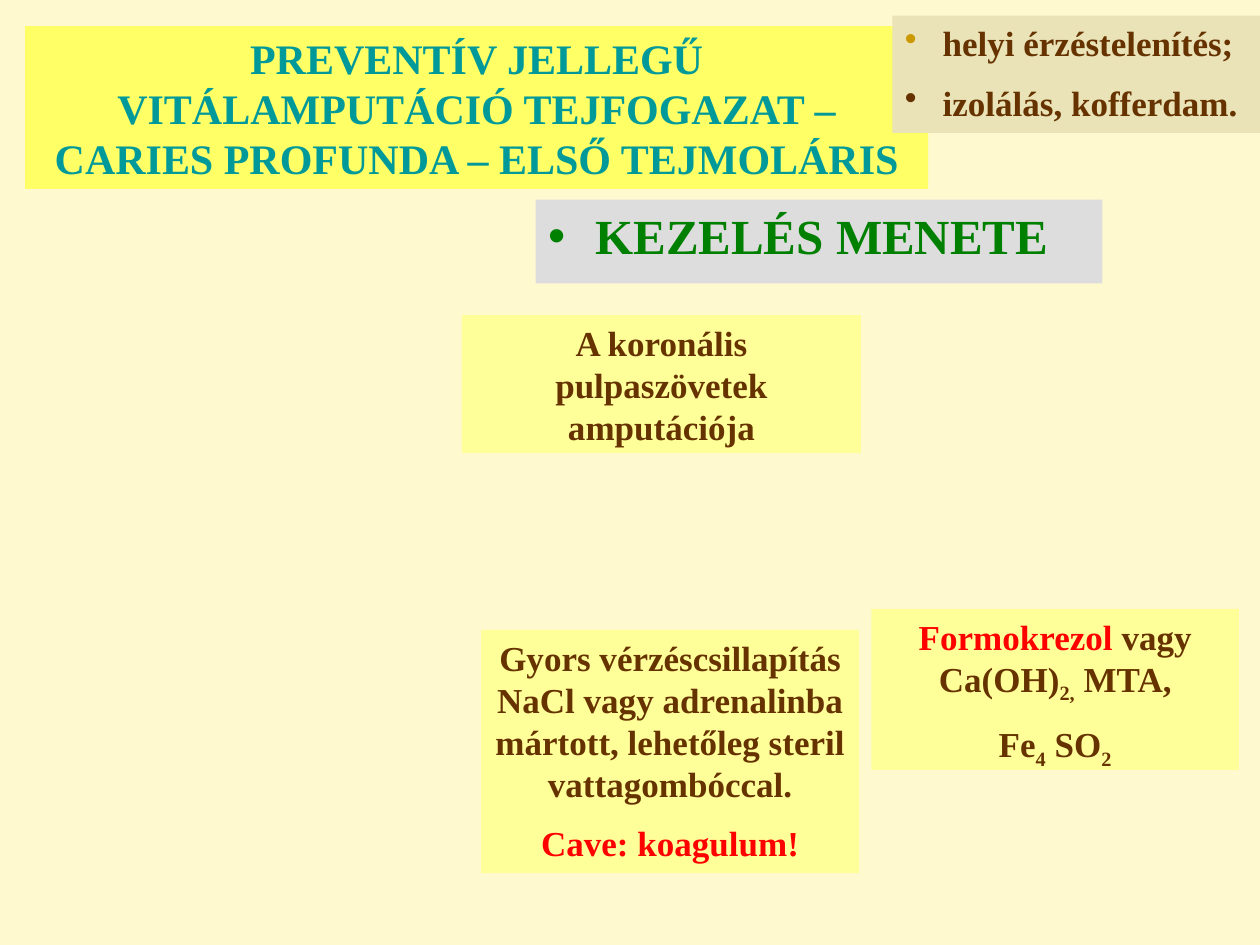
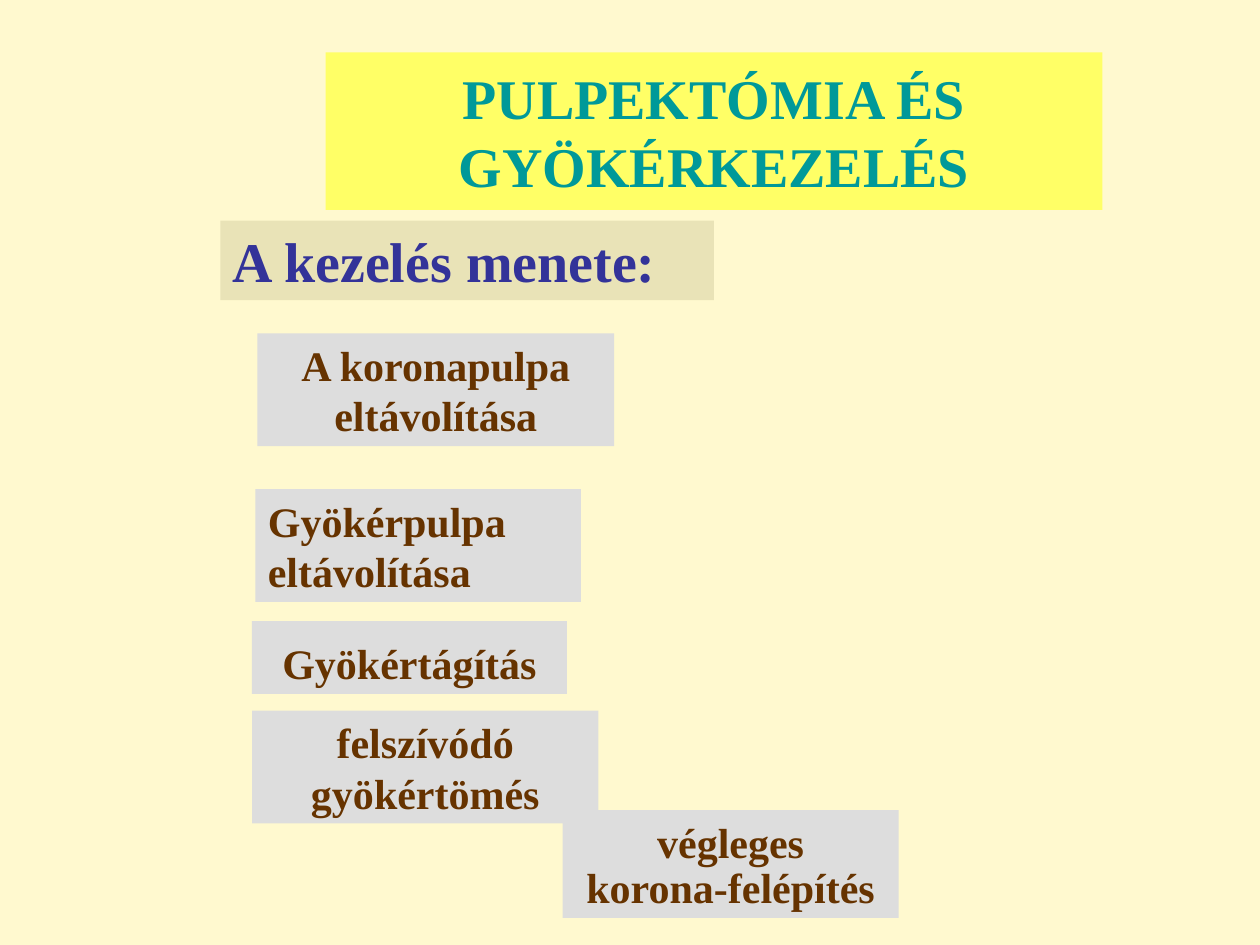
from lxml import etree
from pptx import Presentation
from pptx.dml.color import RGBColor
from pptx.enum.text import MSO_ANCHOR, MSO_AUTO_SIZE, PP_ALIGN
from pptx.oxml.ns import qn
from pptx.util import Pt

LEFT, CENTER = PP_ALIGN.LEFT, PP_ALIGN.CENTER
TOP, MIDDLE = MSO_ANCHOR.TOP, MSO_ANCHOR.MIDDLE
FIXED, GROW = MSO_AUTO_SIZE.NONE, MSO_AUTO_SIZE.SHAPE_TO_FIT_TEXT

FONT = "Times New Roman"
CREAM = RGBColor(0xFF, 0xF9, 0xCF)
YELLOW = RGBColor(0xFF, 0xFF, 0x66)
PALE_YELLOW = RGBColor(0xFF, 0xFF, 0x99)
GREY = RGBColor(0xDD, 0xDD, 0xDD)
SAND = RGBColor(0xE9, 0xE3, 0xB7)
TEAL = RGBColor(0x00, 0x99, 0x99)
GREEN = RGBColor(0x00, 0x80, 0x00)
BROWN = RGBColor(0x66, 0x33, 0x00)
RED = RGBColor(0xFF, 0x00, 0x00)
GOLD = RGBColor(0xCC, 0x99, 0x00)
INDIGO = RGBColor(0x33, 0x33, 0x99)

TITLE_AND_CONTENT, TITLE_ONLY = 1, 5
BULLET_INDENT = Pt(21.6)


class Deck:
    """Holds the shared style and the current slide."""

    def __init__(self):
        self.presentation = Presentation()
        self.presentation.slide_width = Pt(720)
        self.presentation.slide_height = Pt(540)
        background = self.presentation.slide_master.background.fill
        background.solid()
        background.fore_color.rgb = CREAM
        self.slide = None

    def new_slide(self, layout):
        layouts = self.presentation.slide_layouts
        self.slide = self.presentation.slides.add_slide(layouts[layout])

    def dress(self, shape, box, fill, anchor, auto_size):
        shape.left, shape.top, shape.width, shape.height = map(Pt, box)
        shape.fill.solid()
        shape.fill.fore_color.rgb = fill
        frame = shape.text_frame
        frame.word_wrap = True
        frame.vertical_anchor = anchor
        frame.auto_size = auto_size
        return frame

    def format_runs(self, paragraph, size, color):
        for line_break in paragraph._p.findall(qn("a:br")):
            etree.SubElement(line_break, qn("a:rPr"), sz=str(size * 100), b="1")
        for run in paragraph.runs:
            run.font.name = FONT
            run.font.size = Pt(size)
            run.font.bold = True
            run.font.color.rgb = color

    def placeholder(self, shape, text, box, size, color, fill, align, anchor):
        frame = self.dress(shape, box, fill, anchor, FIXED)
        frame.text = text
        paragraph = frame.paragraphs[0]
        paragraph.alignment = align
        paragraph.space_before = Pt(0)
        self.format_runs(paragraph, size, color)

    def title(self, text, box, size):
        self.placeholder(self.slide.shapes.title, text, box, size,
                         TEAL, YELLOW, CENTER, MIDDLE)

    def body(self, text, box, size, color):
        self.placeholder(self.slide.placeholders[1], text, box, size,
                         color, GREY, LEFT, TOP)

    def note(self, lines, box, size, fill, color=BROWN, align=CENTER, anchor=TOP):
        shape = self.slide.shapes.add_textbox(*map(Pt, box))
        frame = self.dress(shape, box, fill, anchor, GROW)
        frame.text = "\n".join(lines)
        for index, paragraph in enumerate(frame.paragraphs):
            paragraph.alignment = align
            paragraph.space_before = Pt(size / 2 if index else 0)
            self.format_runs(paragraph, size, color)
        return frame.paragraphs

    def bullet(self, paragraph, color):
        properties = paragraph._p.get_or_add_pPr()
        properties.set("marL", str(BULLET_INDENT))
        properties.set("indent", str(-BULLET_INDENT))
        bullet_color = etree.SubElement(properties, qn("a:buClr"))
        etree.SubElement(bullet_color, qn("a:srgbClr"), val=str(color))
        etree.SubElement(properties, qn("a:buChar"), char="•")

    def formula(self, paragraph, parts, size):
        paragraph.text = ""
        for text, color, is_subscript in parts:
            run = paragraph.add_run()
            run.text = text
            if is_subscript:
                run.font._element.set("baseline", "-25000")
        self.format_runs(paragraph, size, BROWN)
        for run, (_, color, _) in zip(paragraph.runs, parts):
            run.font.color.rgb = color


def build_vital_amputation(deck):
    deck.new_slide(TITLE_AND_CONTENT)
    deck.title("PREVENTÍV JELLEGŰ\vVITÁLAMPUTÁCIÓ TEJFOGAZAT – "
               "CARIES PROFUNDA – ELSŐ TEJMOLÁRIS", (14.4, 15, 516, 93), 24)
    deck.body("KEZELÉS MENETE", (306, 114, 324, 48), 28, GREEN)
    deck.note(["A koronális pulpaszövetek amputációja"],
              (264, 180, 228, 79), 20, PALE_YELLOW)
    bleeding = deck.note(
        ["Gyors vérzéscsillapítás NaCl vagy adrenalinba mártott, "
         "lehetőleg steril vattagombóccal.", "Cave: koagulum!"],
        (275, 360, 216, 139), 20, PALE_YELLOW)
    deck.format_runs(bleeding[1], 20, RED)
    agents = deck.note(["Formokrezol", "Fe"], (498, 348, 210, 92), 20, PALE_YELLOW)
    deck.formula(agents[0], [("Formokrezol ", RED, False),
                             ("vagy Ca(OH)", BROWN, False),
                             ("2,", BROWN, True),
                             (" MTA,", BROWN, False)], 20)
    deck.formula(agents[1], [("Fe", BROWN, False), ("4", BROWN, True),
                             (" SO", BROWN, False), ("2", BROWN, True)], 20)
    preparation = deck.note(["helyi érzéstelenítés;", "izolálás, kofferdam."],
                            (510, 9, 210, 67), 20, SAND, align=LEFT)
    for paragraph, color in zip(preparation, (GOLD, BROWN)):
        deck.bullet(paragraph, color)


def build_pulpectomy(deck):
    deck.new_slide(TITLE_ONLY)
    deck.title("PULPEKTÓMIA ÉS GYÖKÉRKEZELÉS", (186, 30, 444, 90), 32)
    deck.note(["A kezelés menete:"], (126, 126, 282, 45.5), 32, SAND,
              INDIGO, LEFT)
    widening = deck.note(["Gyökértágítás"], (144, 355, 180, 41.5), 24, GREY,
                         anchor=MIDDLE)
    widening[0].line_spacing = 1.2
    deck.note(["Gyökérpulpa eltávolítása"], (146, 279.5, 186, 64.5), 24, GREY,
              align=LEFT)
    deck.note(["A koronapulpa eltávolítása"], (147, 190.5, 204, 64.5), 24, GREY)
    deck.note(["felszívódó gyökértömés"], (144, 406, 198, 64.5), 24, GREY)
    crown = deck.note(["végleges", "korona-felépítés"],
                      (321.5, 463, 192, 61.5), 24, GREY)
    crown[1].line_spacing = 0.4


def main():
    deck = Deck()
    build_vital_amputation(deck)
    build_pulpectomy(deck)
    deck.presentation.save("out.pptx")


if __name__ == "__main__":
    main()
